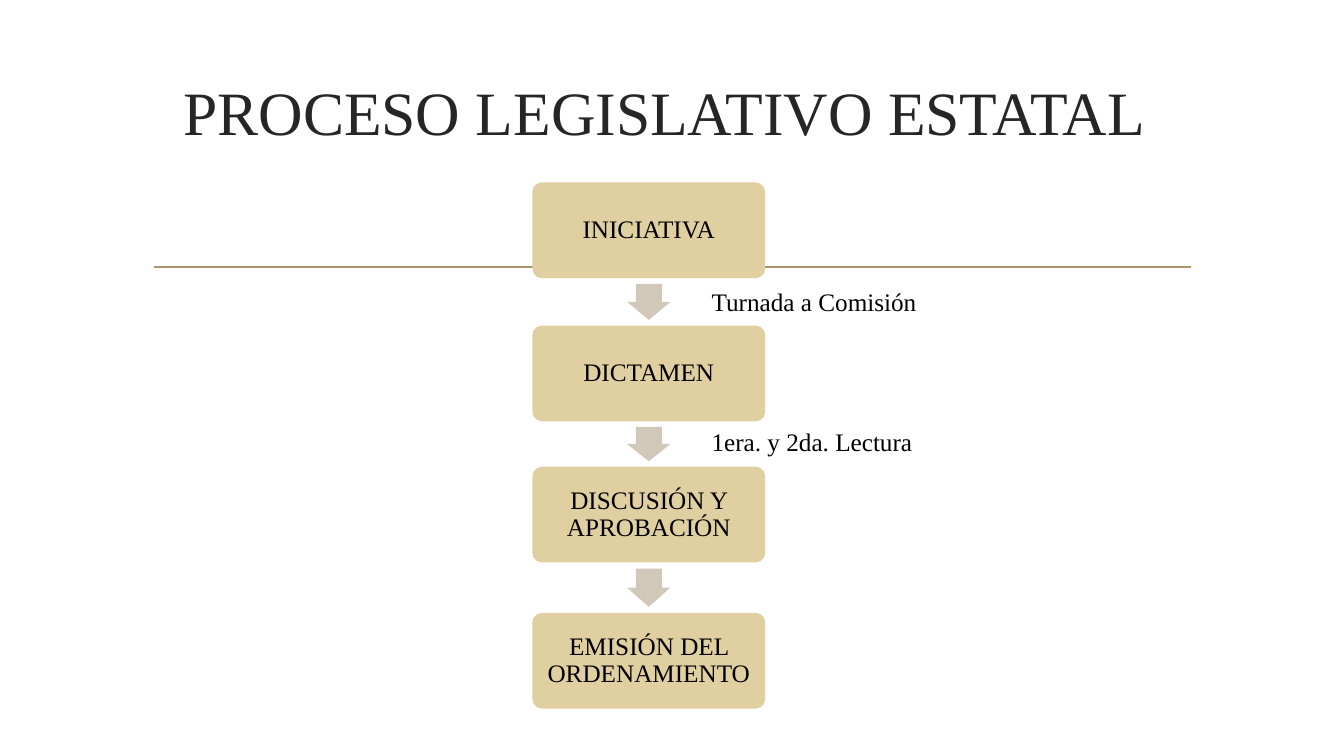
import dataclasses

import pptx
import pptx.dml.color
import pptx.enum.shapes
import pptx.enum.text
import pptx.oxml.ns
import pptx.util
from lxml import etree

Inches = pptx.util.Inches
ALIGN = pptx.enum.text.PP_ALIGN
ANCHOR = pptx.enum.text.MSO_ANCHOR
SHAPE = pptx.enum.shapes.MSO_SHAPE


@dataclasses.dataclass(frozen=True)
class Theme:
    font: str = "Times New Roman"
    title_size: float = 44
    body_size: float = 18
    title_color: str = "262626"
    text_color: str = "000000"
    step_fill: str = "E0CFA1"
    arrow_fill: str = "D2C8BA"
    rule_color: str = "AB946B"
    rule_width: float = 1.25


@dataclasses.dataclass(frozen=True)
class Box:
    left: float
    top: float
    width: float
    height: float

    @property
    def bottom(self):
        return self.top + self.height

    def lengths(self):
        return [Inches(n) for n in (self.left, self.top, self.width, self.height)]


THEME = Theme()
PAGE = Box(0, 0, 13.33, 7.5)
TITLE_BOX = Box(1.42, 0.38, 10.5, 1.43)
RULE_BOX = Box(1.53, 2.65, 10.28, 0)
FLOW_BOX = Box(5.28, 1.81, 2.31, 5.22)
STEP_HEIGHT = 0.95
ARROW_WIDTH = 0.43
ARROW_SHARE = 0.76  # share of the gap between two steps
NOTE_LEFT = 1.68  # from the left edge of the flow
NOTE_WIDTH, NOTE_HEIGHT = 3.2, 0.4

# Each step: offset from the top of the flow, label
STEPS = [
    (0, "INICIATIVA"),
    (1.42, "DICTAMEN"),
    (2.82, "DISCUSIÓN Y APROBACIÓN"),
    (4.27, "EMISIÓN DEL ORDENAMIENTO"),
]
# Each note: offset from the top of the flow, text
NOTES = [(0.98, "Turnada a Comisión"), (2.37, "1era. y 2da. Lectura")]


def rgb(color):
    return pptx.dml.color.RGBColor.from_string(color)


def write(frame, text, size, color, align):
    frame.word_wrap = True
    frame.text = text
    para = frame.paragraphs[0]
    para.alignment = align
    for span in para.runs:
        span.font.name = THEME.font
        span.font.size = pptx.util.Pt(size)
        span.font.color.rgb = rgb(color)
    return para


def add_plain_shape(page, kind, box, fill):
    shape = page.shapes.add_shape(kind, *box.lengths())
    shape.shadow.inherit = False
    shape.fill.solid()
    shape.fill.fore_color.rgb = rgb(fill)
    shape.line.fill.background()
    return shape


def place_title(page, box, text):
    title = page.shapes.title
    title.left, title.top, title.width, title.height = box.lengths()
    frame = title.text_frame
    write(frame, text, THEME.title_size, THEME.title_color, ALIGN.CENTER)
    frame.auto_size = pptx.enum.text.MSO_AUTO_SIZE.NONE
    frame.vertical_anchor = ANCHOR.MIDDLE
    frame.margin_right = Inches(0.25)


def add_rule(page, box):
    rule = page.shapes.add_connector(
        pptx.enum.shapes.MSO_CONNECTOR.STRAIGHT,
        Inches(box.left), Inches(box.top),
        Inches(box.left + box.width), Inches(box.top),
    )
    rule.line.color.rgb = rgb(THEME.rule_color)
    rule.line.width = pptx.util.Pt(THEME.rule_width)
    etree.SubElement(rule._element.spPr, pptx.oxml.ns.qn("a:effectLst"))


def add_step(page, box, label):
    step = add_plain_shape(page, SHAPE.ROUNDED_RECTANGLE, box, THEME.step_fill)
    step.adjustments[0] = 0.1
    frame = step.text_frame
    frame.margin_left = frame.margin_right = Inches(0.07)
    frame.margin_top = frame.margin_bottom = Inches(0.07)
    frame.vertical_anchor = ANCHOR.MIDDLE
    para = write(frame, label, THEME.body_size, THEME.text_color, ALIGN.CENTER)
    para.line_spacing = 0.9


def add_arrow_between(page, upper, lower):
    gap = lower.top - upper.bottom
    height = gap * ARROW_SHARE
    box = Box(
        upper.left + (upper.width - ARROW_WIDTH) / 2,
        upper.bottom + (gap - height) / 2,
        ARROW_WIDTH,
        height,
    )
    arrow = add_plain_shape(page, SHAPE.DOWN_ARROW, box, THEME.arrow_fill)
    arrow.adjustments[0] = 0.6
    arrow.adjustments[1] = 0.5


def add_note(page, box, text):
    note = page.shapes.add_textbox(*box.lengths())
    write(note.text_frame, text, THEME.body_size, THEME.text_color, ALIGN.LEFT)


def add_flow(page, box):
    step_boxes = [
        Box(box.left, box.top + offset, box.width, STEP_HEIGHT) for offset, _ in STEPS
    ]
    for step_box, (_, label) in zip(step_boxes, STEPS):
        add_step(page, step_box, label)
    for upper, lower in zip(step_boxes, step_boxes[1:]):
        add_arrow_between(page, upper, lower)
    for offset, text in NOTES:
        note_box = Box(box.left + NOTE_LEFT, box.top + offset, NOTE_WIDTH, NOTE_HEIGHT)
        add_note(page, note_box, text)


def main():
    deck = pptx.Presentation()
    deck.slide_width, deck.slide_height = Inches(PAGE.width), Inches(PAGE.height)
    page = deck.slides.add_slide(deck.slide_layouts.get_by_name("Title Only"))
    place_title(page, TITLE_BOX, "PROCESO LEGISLATIVO ESTATAL")
    add_rule(page, RULE_BOX)
    add_flow(page, FLOW_BOX)
    deck.save("out.pptx")


if __name__ == "__main__":
    main()
